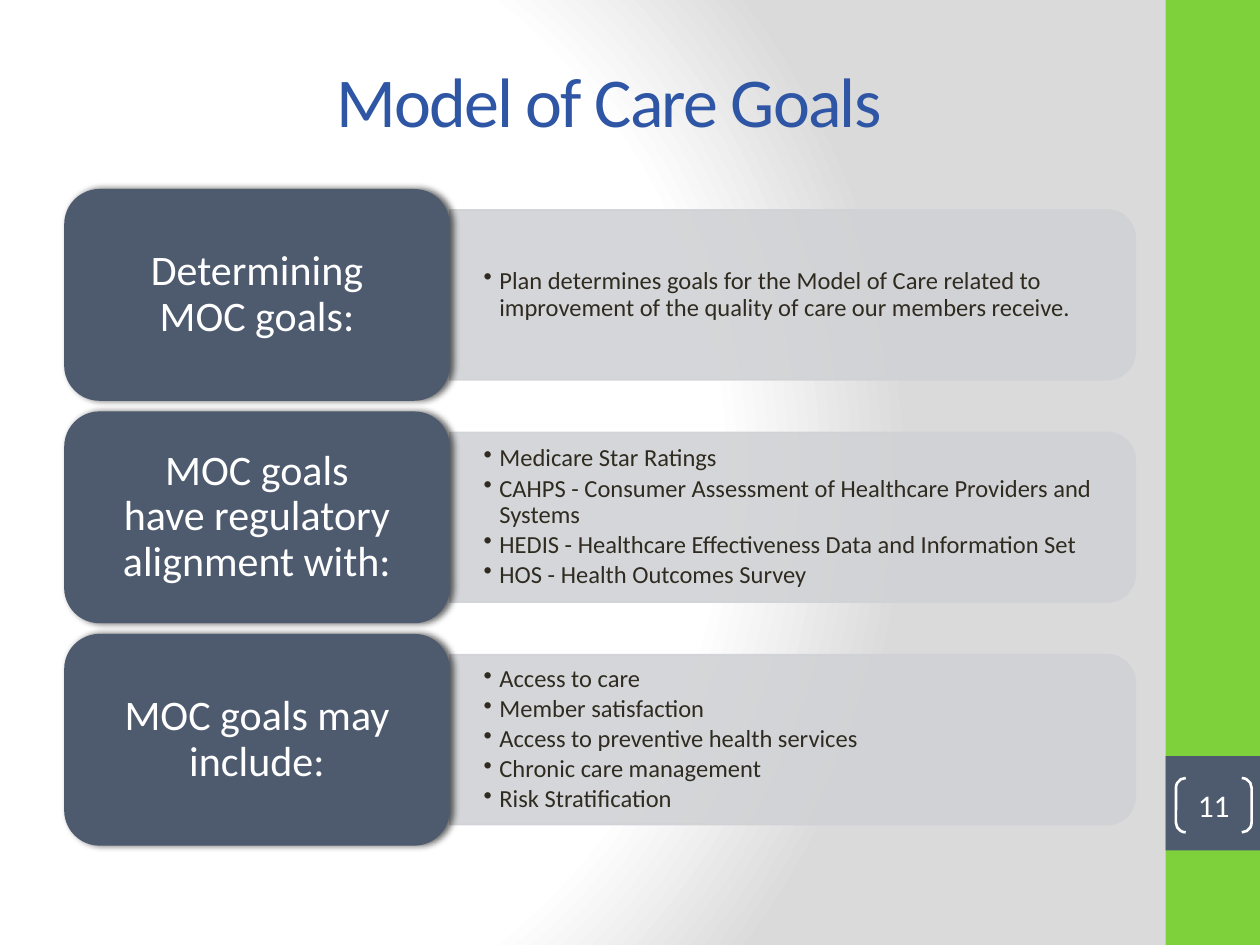
from lxml.etree import SubElement
from pptx import Presentation
from pptx.dml.color import RGBColor
from pptx.enum.shapes import MSO_SHAPE as SHAPE
from pptx.enum.text import MSO_ANCHOR as ANCHOR, PP_ALIGN as ALIGN
from pptx.oxml import parse_xml
from pptx.oxml.ns import nsdecls, qn
from pptx.util import Pt

GREEN, SLATE, SILVER = "7FD13B", "4E5B6F", "D0D2D5"
WHITE, BLUE, INK = "FFFFFF", "2E56A5", "2F2B20"

ROW_TOP, ROW_PITCH = 108, 127.1
LABEL_LEFT, LABEL_W, LABEL_H = 36.7, 220.3, 121
PANEL_W, PANEL_H = 391.7, 97

GOALS = [
    ("Determining\vMOC goals:", [
        "Plan determines goals for the Model of Care related to "
        "improvement of the quality of care our members receive."]),
    ("MOC goals\vhave regulatory alignment with:", [
        "Medicare Star Ratings",
        "CAHPS - Consumer Assessment of Healthcare Providers and Systems",
        "HEDIS - Healthcare Effectiveness Data and Information Set",
        "HOS - Health Outcomes Survey"]),
    ("MOC goals may include:", [
        "Access to care",
        "Member satisfaction",
        "Access to preventive health services",
        "Chronic care management",
        "Risk Stratification"]),
]


def rgb(color):
    return RGBColor.from_string(color)


def set_background(s):
    s.background.fill.solid()
    bg_pr = s.background._cSld.bg.bgPr
    stops = "".join(
        f'<a:gs pos="{pos * 1000}"><a:srgbClr val="{color}"/></a:gs>'
        for pos, color in [(0, WHITE), (75, WHITE), (100, "DADADA")])
    grad = parse_xml(
        f'<a:gradFill {nsdecls("a")} rotWithShape="1"><a:gsLst>{stops}</a:gsLst>'
        '<a:path path="circle"><a:fillToRect l="20000" t="50000" r="100000" '
        'b="50000"/></a:path></a:gradFill>')
    bg_pr.replace(bg_pr.find(qn("a:solidFill")), grad)


def add_shape(s, kind, x, y, w, h, fill=None, line=None, width=1):
    sp = s.shapes.add_shape(kind, Pt(x), Pt(y), Pt(w), Pt(h))
    sp.shadow.inherit = False
    if fill:
        sp.fill.solid()
        sp.fill.fore_color.rgb = rgb(fill)
    else:
        sp.fill.background()
    if line:
        sp.line.color.rgb = rgb(line)
        sp.line.width = Pt(width)
    else:
        sp.line.fill.background()
    return sp


def add_box(s, x, y, w, h):
    return s.shapes.add_textbox(Pt(x), Pt(y), Pt(w), Pt(h))


def set_insets(tf, side, end):
    tf.margin_left = tf.margin_right = Pt(side)
    tf.margin_top = tf.margin_bottom = Pt(end)


def write(sp, lines, size, color, align=ALIGN.CENTER, spacing=None):
    tf = sp.text_frame
    tf.word_wrap = True
    tf.vertical_anchor = ANCHOR.MIDDLE
    for i, line in enumerate(lines):
        p = tf.add_paragraph() if i else tf.paragraphs[0]
        p.text = line
        p.alignment = align
        p.line_spacing = spacing
        p.font.name = "Calibri"
        p.font.size = Pt(size)
        p.font.color.rgb = rgb(color)
    return tf


def add_bullet(p):
    p.level = 1
    p.space_after = Pt(2)
    pPr = p._p.get_or_add_pPr()
    pPr.set("marL", str(Pt(9)))
    pPr.set("indent", str(Pt(-9)))
    bullet = parse_xml(f'<a:buChar {nsdecls("a")} char="•"/>')
    pPr.find(qn("a:defRPr")).addprevious(bullet)


def add_shadow(sp):
    effects = sp._element.spPr.find(qn("a:effectLst"))
    effects.append(parse_xml(
        f'<a:outerShdw {nsdecls("a")} blurRad="{Pt(4)}" dist="{Pt(2)}" dir="0" '
        'rotWithShape="0"><a:srgbClr val="000000"><a:alpha val="60000"/>'
        '</a:srgbClr></a:outerShdw>'))


def add_panel(s, y, items):
    x = LABEL_LEFT + LABEL_W
    sp = add_shape(s, SHAPE.ROUND_2_SAME_RECTANGLE,
                   x + (PANEL_W - PANEL_H) / 2, y + (PANEL_H - PANEL_W) / 2,
                   PANEL_H, PANEL_W, SILVER, SILVER)
    sp.rotation = 90
    for color in sp._element.spPr.iter(qn("a:srgbClr")):
        SubElement(color, qn("a:alpha")).set("val", "90000")
    box = add_box(s, x, y + 5, PANEL_W - 5, PANEL_H - 10)
    tf = write(box, items, 14, INK, ALIGN.LEFT, 0.9)
    set_insets(tf, 19.4, 10)
    for p in tf.paragraphs:
        add_bullet(p)


def add_label(s, y, text):
    sp = add_shape(s, SHAPE.ROUNDED_RECTANGLE, LABEL_LEFT, y, LABEL_W, LABEL_H, SLATE)
    add_shadow(sp)
    write(sp, [text], 24, WHITE, spacing=0.9)


def add_title(s, text):
    tf = write(add_box(s, 48, 12, 600, 90), [text], 40, BLUE)
    tf.paragraphs[0].runs[0]._r.get_or_add_rPr().set("spc", "-100")


def add_page_number(s, number):
    sp = add_shape(s, SHAPE.DOUBLE_BRACKET, 672, 444.6, 43.2, 31, line=WHITE, width=1.5)
    sp.adjustments[0] = 0.18
    set_insets(write(sp, [number], 18, WHITE), 0, 0)


def main():
    prs = Presentation()
    prs.slide_width, prs.slide_height = Pt(720), Pt(540)
    s = prs.slides.add_slide(prs.slide_layouts[6])
    set_background(s)
    add_shape(s, SHAPE.RECTANGLE, 666, 0, 54, 540, GREEN)
    add_shape(s, SHAPE.RECTANGLE, 666, 432, 54, 54, SLATE)
    add_title(s, "Model of Care Goals")
    add_page_number(s, "11")
    for i, (label, items) in enumerate(GOALS):
        y = ROW_TOP + i * ROW_PITCH
        add_panel(s, y + (LABEL_H - PANEL_H) / 2, items)
        add_label(s, y, label)
    prs.save("out.pptx")


if __name__ == "__main__":
    main()
